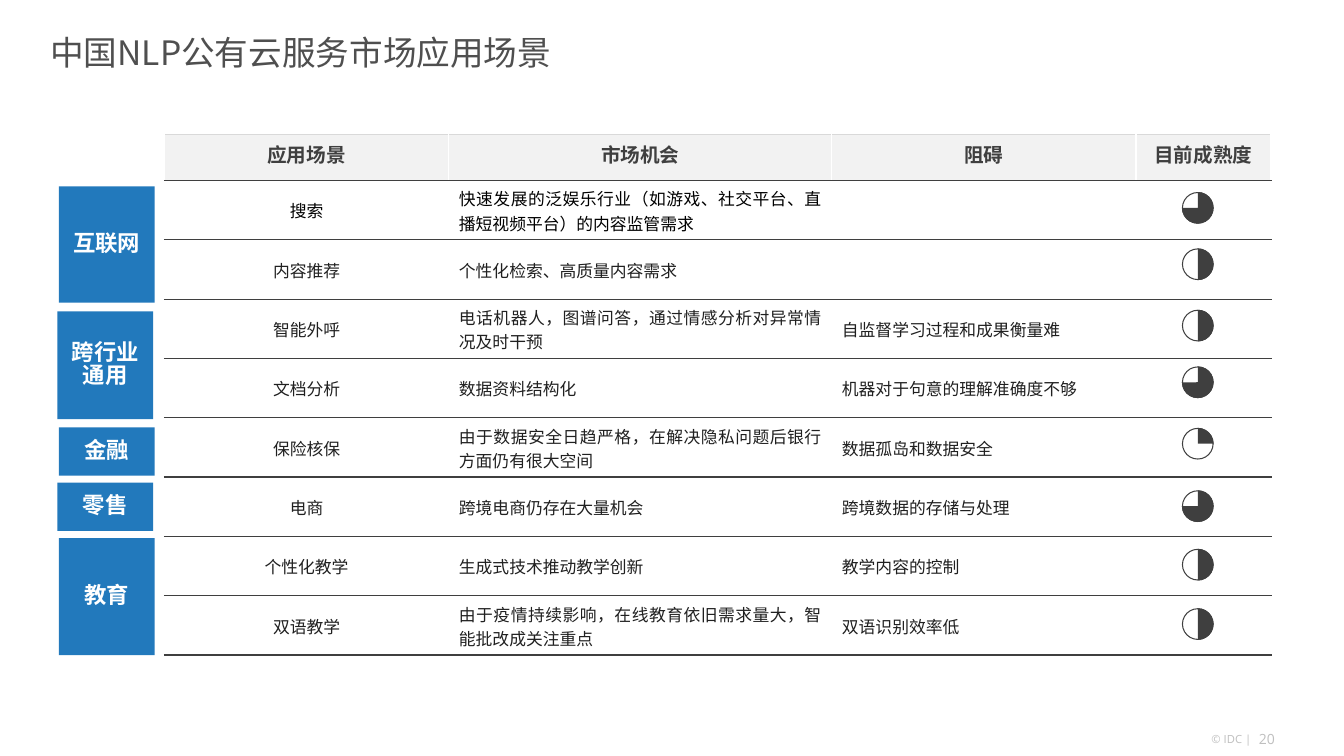
"""Build the slide on application scenarios of the NLP public cloud market in China."""
import lxml.etree
import pptx
import pptx.dml.color
import pptx.enum.shapes
import pptx.enum.text
import pptx.oxml.ns
import pptx.util

Pt = pptx.util.Pt
ALIGN = pptx.enum.text.PP_ALIGN
MIDDLE = pptx.enum.text.MSO_ANCHOR.MIDDLE
SHAPE = pptx.enum.shapes.MSO_SHAPE

CJK, LATIN = "Noto Sans CJK SC", "Open Sans"
BLUE, DARK, WHITE = "2279BC", "3F3F3F", "FFFFFF"

TITLE = "中国NLP公有云服务市场应用场景"
HEADINGS = ["应用场景", "市场机会", "阻碍", "目前成熟度"]
SCENARIOS = [
    ("搜索", "快速发展的泛娱乐行业（如游戏、社交平台、直播短视频平台）的内容监管需求", ""),
    ("内容推荐", "个性化检索、高质量内容需求", ""),
    ("智能外呼", "电话机器人，图谱问答，通过情感分析对异常情况及时干预", "自监督学习过程和成果衡量难"),
    ("文档分析", "数据资料结构化", "机器对于句意的理解准确度不够"),
    ("保险核保", "由于数据安全日趋严格，在解决隐私问题后银行方面仍有很大空间", "数据孤岛和数据安全"),
    ("电商", "跨境电商仍存在大量机会", "跨境数据的存储与处理"),
    ("个性化教学", "生成式技术推动教学创新", "教学内容的控制"),
    ("双语教学", "由于疫情持续影响，在线教育依旧需求量大，智能批改成关注重点", "双语识别效率低"),
]
# (quarters filled, top)
MATURITY = [(3, 137.5), (2, 177.8), (2, 221.6), (3, 262.1),
            (1, 306), (3, 350.6), (2, 392.4), (2, 434.8)]
# (name, left, top, height)
INDUSTRIES = [("互联网", 42, 133.2, 83), ("跨行业通用", 41, 222.5, 77), ("金融", 42, 305.2, 34.5),
              ("零售", 41, 344.8, 34.5), ("教育", 42, 384.4, 83.5)]
FOOTER = [("© IDC |", 865.4, 523.4, 40.3, 9.4, 8), ("20", 899.3, 522, 29.5, 12.2, 10)]

TABLE_LEFT, TABLE_TOP = 117.4, 95.8
COLUMNS = [203.2, 273.6, 217.2, 96.5]
HEADING_HEIGHT, ROW_HEIGHT = 33.1, 42.4
INDUSTRY_WIDTH, DIAL_LEFT, DIAL_SIZE = 68.4, 844.6, 21.9


def color(value):
    return pptx.dml.color.RGBColor.from_string(value)


def write(frame, text, size, hue, align, bold=False, face=CJK):
    frame.text = text
    paragraph = frame.paragraphs[0]
    paragraph.alignment = align
    for run in paragraph.runs:
        run.font.size, run.font.bold, run.font.name = Pt(size), bold, face
        run.font.color.rgb = color(hue)
        east_asian = lxml.etree.SubElement(run.font._element, pptx.oxml.ns.qn("a:ea"))
        east_asian.set("typeface", face)


def clear_margins(frame):
    frame.margin_left = frame.margin_top = frame.margin_right = frame.margin_bottom = 0


def style_cell(cell, fill, top):
    properties = cell._tc.get_or_add_tcPr()
    for side, hue in (("L", WHITE), ("R", WHITE), ("T", top), ("B", DARK)):
        border = lxml.etree.SubElement(properties, pptx.oxml.ns.qn("a:ln" + side), w=str(Pt(1)))
        solid = lxml.etree.SubElement(border, pptx.oxml.ns.qn("a:solidFill"))
        lxml.etree.SubElement(solid, pptx.oxml.ns.qn("a:srgbClr"), val=hue)
    cell.fill.solid()
    cell.fill.fore_color.rgb = color(fill)


def add_shape(slide, kind, box, fill, line=None):
    shape = slide.shapes.add_shape(kind, *map(Pt, box))
    shape.shadow.inherit = False
    shape.fill.solid()
    shape.fill.fore_color.rgb = color(fill)
    if line:
        shape.line.color.rgb = color(line)
        shape.line.width = Pt(0.75)
    else:
        shape.line.fill.background()
    return shape


def add_scenarios(slide):
    height = HEADING_HEIGHT + ROW_HEIGHT * len(SCENARIOS)
    table = slide.shapes.add_table(len(SCENARIOS) + 1, len(COLUMNS), Pt(TABLE_LEFT), Pt(TABLE_TOP),
                                   Pt(sum(COLUMNS)), Pt(height)).table
    table.first_row = table.horz_banding = False
    for column, width in zip(table.columns, COLUMNS):
        column.width = Pt(width)
    for index, row in enumerate(table.rows):
        row.height = Pt(ROW_HEIGHT if index else HEADING_HEIGHT)
    for index, heading in enumerate(HEADINGS):
        cell = table.cell(0, index)
        style_cell(cell, "F2F2F2", "D9D9D9")
        write(cell.text_frame, heading, 14, DARK, ALIGN.CENTER, True)
    for number, scenario in enumerate(SCENARIOS, 1):
        for index, text in enumerate((*scenario, "")):
            cell = table.cell(number, index)
            style_cell(cell, WHITE, DARK)
            cell.vertical_anchor = MIDDLE
            cell.margin_top, cell.margin_bottom = Pt(0.7), 0
            if text:
                write(cell.text_frame, text, 12, "000000" if number == 1 else "202020",
                      ALIGN.JUSTIFY if index else ALIGN.CENTER)


def main():
    deck = pptx.Presentation()
    deck.slide_width, deck.slide_height = Pt(960), Pt(540)
    slide = deck.slides.add_slide(deck.slide_layouts[5])

    title = slide.shapes.title
    title.left, title.top, title.width, title.height = map(Pt, (36, 0, 852, 74))
    clear_margins(title.text_frame)
    title.text_frame.vertical_anchor = MIDDLE
    write(title.text_frame, TITLE, 24, "4F4F4F", ALIGN.LEFT)

    add_scenarios(slide)

    for name, left, top, height in INDUSTRIES:
        industry = add_shape(slide, SHAPE.RECTANGLE, (left, top, INDUSTRY_WIDTH, height), BLUE)
        industry.text_frame.word_wrap = True
        industry.text_frame.vertical_anchor = MIDDLE
        write(industry.text_frame, name, 16, WHITE, ALIGN.CENTER, True)
        industry.text_frame.paragraphs[0].line_spacing = 0.83

    for quarters, top in MATURITY:
        box = (DIAL_LEFT, top, DIAL_SIZE, DIAL_SIZE)
        add_shape(slide, SHAPE.OVAL, box, WHITE, DARK)
        filled = add_shape(slide, SHAPE.ARC, box, DARK, DARK)
        filled.adjustments[0] = 162
        filled.adjustments[1] = 54 * (quarters - 1)

    for text, left, top, width, height, size in FOOTER:
        note = slide.shapes.add_textbox(*map(Pt, (left, top, width, height)))
        clear_margins(note.text_frame)
        note.text_frame.word_wrap = True
        write(note.text_frame, text, size, "BFBFBF", ALIGN.LEFT, face=LATIN)
        note.text_frame.vertical_anchor = MIDDLE

    deck.save("out.pptx")


if __name__ == "__main__":
    main()
